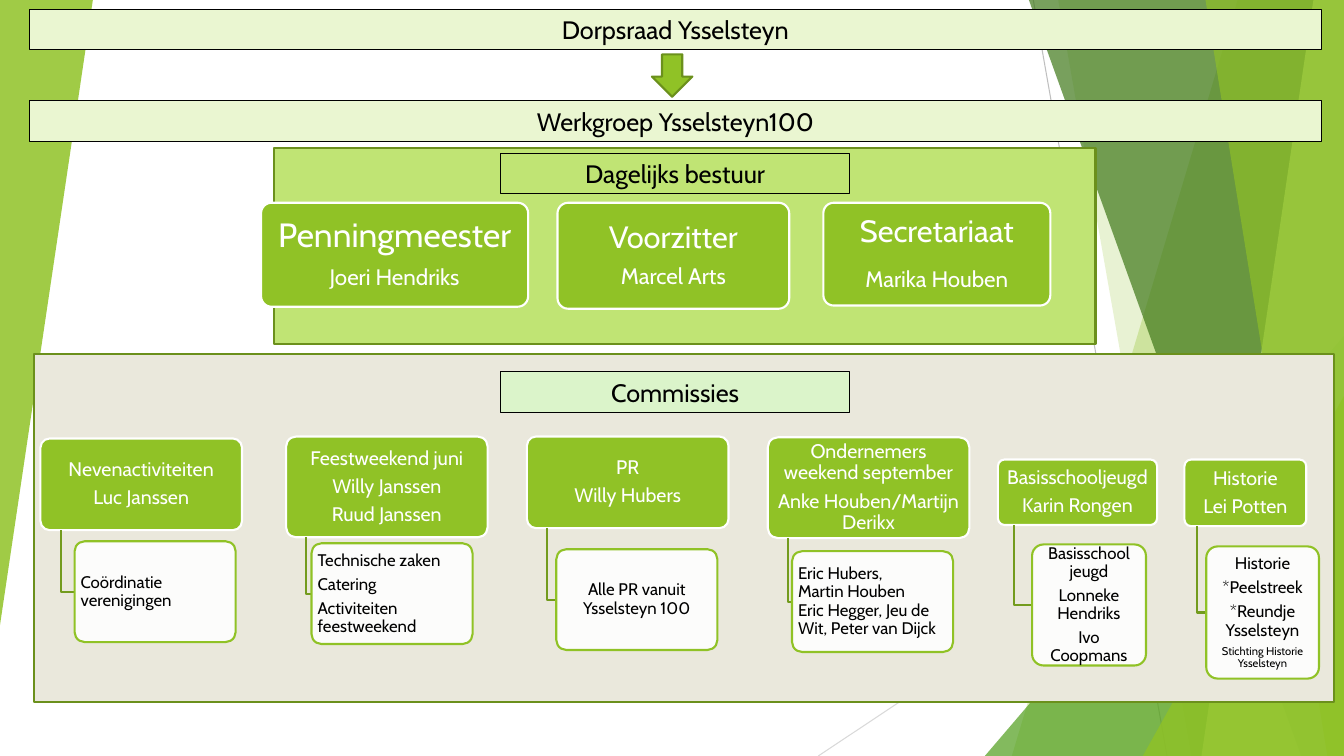
from lxml import etree
from pptx import Presentation
from pptx.dml.color import RGBColor
from pptx.enum.shapes import MSO_CONNECTOR, MSO_SHAPE
from pptx.enum.text import MSO_ANCHOR, PP_ALIGN
from pptx.oxml.ns import qn
from pptx.util import Cm, Pt

RECTANGLE = MSO_SHAPE.RECTANGLE
ROUNDED = MSO_SHAPE.ROUNDED_RECTANGLE
TRIANGLE = MSO_SHAPE.ISOSCELES_TRIANGLE
DOWN_ARROW = MSO_SHAPE.DOWN_ARROW
STRAIGHT = MSO_CONNECTOR.STRAIGHT
MIDDLE = MSO_ANCHOR.MIDDLE
LEFT, CENTER = PP_ALIGN.LEFT, PP_ALIGN.CENTER

WHITE = RGBColor(0xFF, 0xFF, 0xFF)
BLACK = RGBColor(0x00, 0x00, 0x00)
GREEN = RGBColor(0x90, 0xC2, 0x26)
LEAF = RGBColor(0x54, 0xA0, 0x21)
FOREST = RGBColor(0x3F, 0x78, 0x19)
LIME = RGBColor(0xC0, 0xE4, 0x74)
PALE_LIME = RGBColor(0xEA, 0xF6, 0xD1)
MINT = RGBColor(0xDB, 0xF4, 0xCA)
SAND = RGBColor(0xEA, 0xE8, 0xDC)
OUTLINE = RGBColor(0x6B, 0x90, 0x1C)
BRANCH = RGBColor(0x73, 0x9B, 0x1E)
GREY = RGBColor(0xBF, 0xBF, 0xBF)
LIGHT_GREY = RGBColor(0xD9, 0xD9, 0xD9)

FONT = "Cabin"
SLIDE_WIDTH, SLIDE_HEIGHT = 33.87, 19.05
CARD_FRAME = {"word_wrap": True, "vertical_anchor": MIDDLE,
              "margin_left": Cm(0.08), "margin_right": Cm(0.08),
              "margin_top": Cm(0.05), "margin_bottom": Cm(0.05)}
BANNER_FRAME = {"word_wrap": True, "vertical_anchor": MIDDLE}

# Left, top, width, height, then (text, size) lines and the gap above the name
ROLES = [
    ((14.05, 5.11, 5.84, 2.67), [("Voorzitter", 22), ("Marcel Arts", 16)], 0),
    ((20.75, 5.11, 5.72, 2.59), [("Secretariaat", 22), ("Marika Houben", 16)], 6),
    ((6.58, 5.11, 6.73, 2.62), [("Penningmeester", 24), ("Joeri Hendriks", 16)], 0),
]

# Header box and lines, member box and lines, member alignment, gap ratio
COMMISSIONS = [
    ((1.02, 11.05, 5.08, 2.31), ["Nevenactiviteiten", "Luc Janssen"],
     (1.88, 13.64, 4.06, 2.54), [("Coördinatie verenigingen", 12)], LEFT, 0.35),
    ((7.21, 11, 5.08, 2.54), ["Feestweekend juni", "Willy Janssen", "Ruud Janssen"],
     (7.85, 13.69, 4.06, 2.54),
     [("Technische zaken", 12), ("Catering", 12), ("Activiteiten feestweekend", 12)],
     LEFT, 0.35),
    ((13.28, 11, 5.08, 2.31), ["PR", "Willy Hubers"],
     (14.02, 13.84, 4.06, 2.54), [("Alle PR vanuit Ysselsteyn 100", 12)], CENTER, 0.35),
    ((19.35, 11.02, 5.08, 2.54),
     ["Ondernemers weekend september", "Anke Houben/Martijn Derikx"],
     (19.96, 13.89, 4.06, 2.54),
     [("Eric Hubers,", 12), ("Martin Houben", 12),
      ("Eric Hegger, Jeu de Wit, Peter van Dijck", 12)], LEFT, 0),
    ((25.15, 11.58, 4.01, 1.65), ["Basisschooljeugd", "Karin Rongen"],
     (26.01, 13.72, 2.87, 3.05),
     [("Basisschool jeugd", 12), ("Lonneke Hendriks", 12), ("Ivo Coopmans", 12)],
     CENTER, 0.35),
    ((29.85, 11.58, 3.07, 1.68), ["Historie", "Lei Potten"],
     (30.4, 13.77, 2.84, 3.33),
     [("Historie", 12), ("*Peelstreek", 12), ("*Reundje Ysselsteyn", 12),
      ("Stichting Historie Ysselsteyn", 8)], CENTER, 0.35),
]


def apply_format(target, values):
    for name, value in values.items():
        setattr(target, name, value)


def paint(shape, fill=None, opacity=100, line=None, line_width=1.5):
    """Set fill, opacity in percent and outline; None means not drawn."""
    shape.shadow.inherit = False
    if fill is None:
        shape.fill.background()
    else:
        shape.fill.solid()
        shape.fill.fore_color.rgb = fill
        if opacity < 100:
            color = shape.fill._xPr.find(".//" + qn("a:srgbClr"))
            etree.SubElement(color, qn("a:alpha"), val=str(opacity * 1000))
    if line is None:
        shape.line.fill.background()
    else:
        shape.line.color.rgb = line
        shape.line.width = Pt(line_width)


def add_box(slide, kind, box, corner=None, **style):
    shape = slide.shapes.add_shape(kind, *map(Cm, box))
    if corner is not None:
        shape.adjustments[0] = corner
    paint(shape, **style)
    return shape


def add_polyline(slide, points, close, **style):
    start, *others = [(Cm(x), Cm(y)) for x, y in points]
    builder = slide.shapes.build_freeform(*start)
    builder.add_line_segments(others, close=close)
    paint(builder.convert_to_shape(), **style)


def add_facet(slide, top_x, bottom_x, color, opacity):
    """Draw a band from a slanted left edge to the right side of the slide."""
    corners = [(top_x, 0), (SLIDE_WIDTH, 0),
               (SLIDE_WIDTH, SLIDE_HEIGHT), (bottom_x, SLIDE_HEIGHT)]
    add_polyline(slide, corners, True, fill=color, opacity=opacity)


def add_corner_triangle(slide, box, color, opacity, rotation=0):
    triangle = add_box(slide, TRIANGLE, box, 1.0, fill=color, opacity=opacity)
    triangle.rotation = rotation


def add_thin_line(slide, ends, color):
    connector = slide.shapes.add_connector(STRAIGHT, *map(Cm, ends))
    connector.line.color.rgb = color
    connector.line.width = Pt(0.75)
    etree.SubElement(connector._element.spPr, qn("a:effectLst"))


def write_lines(shape, lines, color, frame, align=CENTER, gap=0, spacing=0.9):
    """Write (text, size) paragraphs; gap is a share of the text size."""
    text_frame = shape.text_frame
    apply_format(text_frame, frame)
    for index, (text, size) in enumerate(lines):
        paragraph = text_frame.add_paragraph() if index else text_frame.paragraphs[0]
        apply_format(paragraph, {"alignment": align, "line_spacing": spacing,
                                 "space_before": Pt(0), "space_after": Pt(gap * size)})
        run = paragraph.add_run()
        run.text = text
        apply_format(run.font, {"name": FONT, "size": Pt(size)})
        run.font.color.rgb = color


def add_banner(slide, text, box, fill=None):
    banner = add_box(slide, RECTANGLE, box, fill=fill, line=BLACK, line_width=0.75)
    write_lines(banner, [(text, 18)], BLACK, BANNER_FRAME, spacing=1.0)


def add_green_card(slide, box, lines):
    card = add_box(slide, ROUNDED, box, 0.1, fill=GREEN, line=WHITE)
    write_lines(card, lines, WHITE, CARD_FRAME, gap=0.35)
    return card


def add_commission(slide, header_box, header, member_box, members, align, gap):
    add_green_card(slide, header_box, [(text, 14) for text in header])
    left, top, width, height = header_box
    member_left, member_top, _, member_height = member_box
    branch_x = left + width / 10
    member_middle = member_top + member_height / 2
    add_polyline(slide, [(branch_x, top + height), (branch_x, member_middle),
                         (member_left, member_middle)], False, line=BRANCH)
    card = add_box(slide, ROUNDED, member_box, 0.1, fill=WHITE, opacity=90, line=GREEN)
    write_lines(card, members, BLACK, CARD_FRAME, align, gap)


def add_backdrop(slide):
    add_thin_line(slide, (26.04, 0, 29.41, SLIDE_HEIGHT), GREY)
    add_thin_line(slide, (SLIDE_WIDTH, 10.24, 20.62, SLIDE_HEIGHT), LIGHT_GREY)
    add_facet(slide, 31.19, 25.5, GREEN, 30)
    add_facet(slide, 26.67, 30.02, GREEN, 20)
    add_corner_triangle(slide, (24.82, 8.46, 9.05, 10.59), LEAF, 72)
    add_facet(slide, 25.93, 32.79, FOREST, 70)
    add_facet(slide, 33.1, 30.28, LIME, 70)
    add_facet(slide, 30.38, 33.45, GREEN, 65)
    add_corner_triangle(slide, (28.8, 9.98, 5.07, 9.07), GREEN, 80)
    add_corner_triangle(slide, (0, 0, 2.34, 15.75), GREEN, 85, rotation=180)


def main():
    presentation = Presentation()
    presentation.slide_width = Cm(SLIDE_WIDTH)
    presentation.slide_height = Cm(SLIDE_HEIGHT)
    slide = presentation.slides.add_slide(presentation.slide_layouts[6])

    add_backdrop(slide)
    add_box(slide, RECTANGLE, (0.86, 8.92, 32.77, 8.76), fill=SAND, line=OUTLINE)
    add_box(slide, RECTANGLE, (6.91, 3.73, 20.7, 4.95), fill=LIME, line=OUTLINE)
    for box, lines, name_gap in ROLES:
        card = add_green_card(slide, box, lines)
        card.text_frame.paragraphs[1].space_before = Pt(name_gap)
    for commission in COMMISSIONS:
        add_commission(slide, *commission)
    add_banner(slide, "Dorpsraad Ysselsteyn", (0.74, 0.23, 32.56, 1.02), PALE_LIME)
    add_banner(slide, "Werkgroep Ysselsteyn100", (0.74, 2.54, 32.56, 1.02), PALE_LIME)
    add_banner(slide, "Dagelijks bestuur", (12.62, 3.86, 8.79, 1.02))
    add_banner(slide, "Commissies", (12.62, 9.37, 8.79, 1.02), MINT)
    add_box(slide, DOWN_ARROW, (16.43, 1.37, 1.02, 1.07), fill=GREEN, line=OUTLINE)
    presentation.save("out.pptx")


if __name__ == "__main__":
    main()
